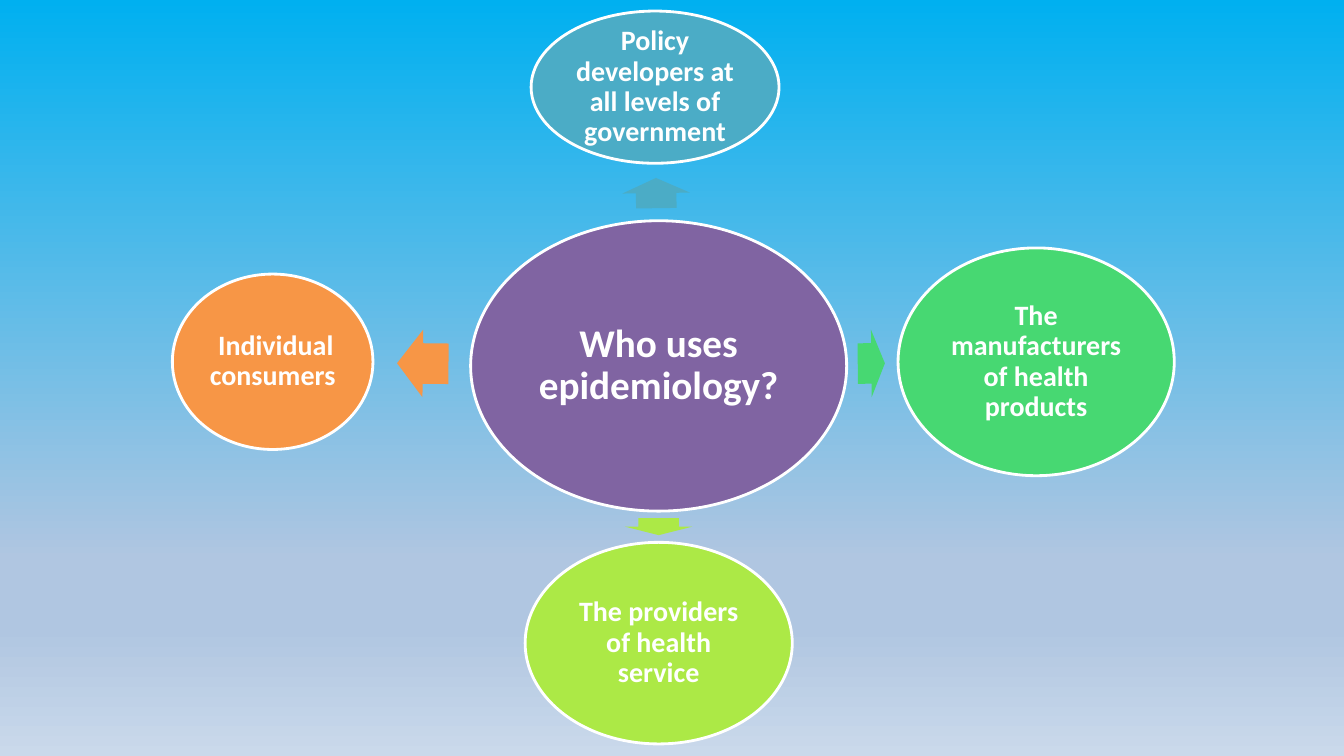
from lxml import etree
from pptx import Presentation
from pptx.dml.color import RGBColor
from pptx.enum.shapes import MSO_SHAPE
from pptx.enum.text import MSO_ANCHOR, PP_ALIGN
from pptx.oxml.ns import qn
from pptx.util import Pt

ELLIPSE = MSO_SHAPE.OVAL
ARROW = MSO_SHAPE.RIGHT_ARROW
MIDDLE = MSO_ANCHOR.MIDDLE
CENTER = PP_ALIGN.CENTER

WHITE = RGBColor(0xFF, 0xFF, 0xFF)
PURPLE = RGBColor(0x80, 0x64, 0xA2)
TEAL = RGBColor(0x4B, 0xAC, 0xC6)
GREEN = RGBColor(0x47, 0xD8, 0x72)
LIME = RGBColor(0xAC, 0xE9, 0x46)
ORANGE = RGBColor(0xF7, 0x96, 0x46)
SKY = RGBColor(0x00, 0xB0, 0xF0)
HAZE = RGBColor(0xB0, 0xC6, 0xE1)
PALE = RGBColor(0xCA, 0xD9, 0xEB)

BACKGROUND_STOPS = [(0, SKY), (74, HAZE), (83, HAZE), (100, PALE)]
ARROW_WIDTH = 48.24

# Text, colour, ellipse box (left, top, width, height),
# arrow (center x, center y, length, rotation)
USERS = [
    ("Policy developers at all levels of government", TEAL,
     (379.4, 7.9, 177.1, 108.7), (468.7, 137.9, 21.6, 269.2)),
    ("The manufacturers of health products", GREEN,
     (641.5, 177.1, 197.3, 162.7), (622.4, 259.6, 19.4, 359.4)),
    ("The providers of health service", LIME,
     (375.1, 387.4, 190.8, 144), (470.5, 376.2, 12.2, 90)),
    (" Individual consumers", ORANGE,
     (123.1, 195.8, 143.3, 125.3), (302, 259.6, 36.7, 180.6)),
]


def set_attributes(target, values):
    for name, value in values.items():
        setattr(target, name, value)


def paint_background(slide):
    fill = slide.background.fill
    fill.gradient()
    fill.gradient_angle = 270
    # The public methods cannot add gradient stops
    stop_list = slide.element.find(".//" + qn("a:gsLst"))
    for stop in list(stop_list):
        stop_list.remove(stop)
    for percent, color in BACKGROUND_STOPS:
        stop = etree.SubElement(stop_list, qn("a:gs"), pos=str(percent * 1000))
        etree.SubElement(stop, qn("a:srgbClr"), val=str(color))


def add_filled_shape(slide, kind, box, color):
    shape = slide.shapes.add_shape(kind, *(Pt(length) for length in box))
    shape.shadow.inherit = False
    shape.fill.solid()
    shape.fill.fore_color.rgb = color
    return shape


def add_ellipse(slide, text, color, box, size):
    shape = add_filled_shape(slide, ELLIPSE, box, color)
    shape.line.color.rgb = WHITE
    shape.line.width = Pt(2)
    inset = Pt(size / 10)
    frame = shape.text_frame
    set_attributes(frame, {
        "word_wrap": True, "vertical_anchor": MIDDLE,
        "margin_left": inset, "margin_right": inset,
        "margin_top": inset, "margin_bottom": inset,
    })
    paragraph = frame.paragraphs[0]
    set_attributes(paragraph, {"alignment": CENTER, "line_spacing": 0.9})
    run = paragraph.add_run()
    run.text = text
    set_attributes(run.font, {"name": "Calibri", "size": Pt(size), "bold": True})
    run.font.color.rgb = WHITE


def add_arrow(slide, color, center_x, center_y, length, rotation):
    box = (center_x - length / 2, center_y - ARROW_WIDTH / 2, length, ARROW_WIDTH)
    shape = add_filled_shape(slide, ARROW, box, color)
    shape.line.fill.background()
    shape.adjustments[0] = 0.6
    shape.adjustments[1] = 0.5
    shape.rotation = rotation


def main():
    presentation = Presentation()
    set_attributes(presentation, {"slide_width": Pt(960), "slide_height": Pt(540)})
    slide = presentation.slides.add_slide(presentation.slide_layouts[6])
    paint_background(slide)

    # Central question
    add_ellipse(slide, "Who uses epidemiology?", PURPLE,
                (336.2, 157.7, 268.6, 207.4), 28)

    # Users around it, each with its arrow
    for text, color, box, arrow in USERS:
        add_arrow(slide, color, *arrow)
        add_ellipse(slide, text, color, box, 20)

    presentation.save("out.pptx")


if __name__ == "__main__":
    main()
